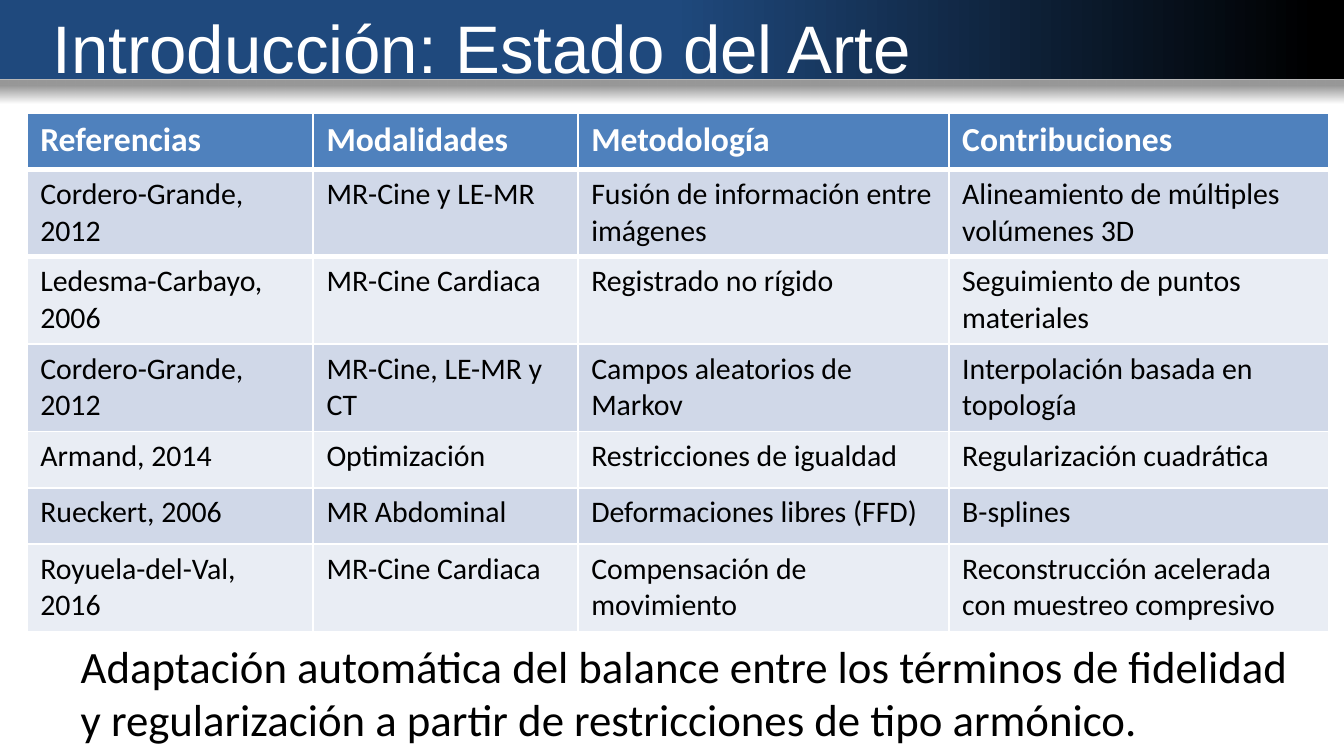
from pptx import Presentation
from pptx.dml.color import RGBColor as RGB
from pptx.enum.shapes import MSO_SHAPE as Shape
from pptx.enum.text import MSO_ANCHOR as Anchor, MSO_AUTO_SIZE as AutoSize, PP_ALIGN as Align
from pptx.oxml import parse_xml
from pptx.oxml.ns import nsdecls
from pptx.util import Inches, Pt

THEME = {
    "navy": "1F497D", "black": "000000", "white": "FFFFFF",
    "header": "4F81BD", "bands": ("D0D8E8", "E9EDF4"),
    "title": {"name": "Arial", "size": Pt(36), "bold": False},
    "heading": {"name": "Calibri", "size": Pt(18), "bold": True},
    "cell": {"name": "Calibri", "size": Pt(16), "bold": False},
    "closing": {"name": "Calibri", "size": Pt(24), "bold": False},
}


def write(frame, text, style, color):
    """Put one formatted paragraph in a text frame."""
    paragraph = frame.paragraphs[0]
    paragraph.alignment = Align.LEFT
    run = paragraph.add_run()
    run.text = text
    for name, value in THEME[style].items():
        setattr(run.font, name, value)
    run.font.color.rgb = RGB.from_string(THEME[color])


def gradient(shape, stops, angle):
    """Fill a shape with (position %, colour, opacity %) stops."""
    shape.fill.background()
    properties = shape._element.spPr
    marks = "".join(
        f'<a:gs pos="{position * 1000}"><a:srgbClr val="{THEME[color]}">'
        f'<a:alpha val="{opacity * 1000}"/></a:srgbClr></a:gs>'
        for position, color, opacity in stops)
    fill = parse_xml(
        f'<a:gradFill {nsdecls("a")} rotWithShape="1"><a:gsLst>{marks}</a:gsLst>'
        f'<a:lin ang="{angle * 60000}" scaled="0"/></a:gradFill>')
    properties.replace(properties.find("{*}noFill"), fill)


presentation = Presentation()
presentation.slide_width = width = Inches(10)
presentation.slide_height = width * 9 // 16
slide = presentation.slides.add_slide(presentation.slide_layouts[5])
bar_height = Inches(0.59)

# Soft shade under the title bar, behind everything else
shade = slide.shapes.add_shape(Shape.RECTANGLE, 0, bar_height, width, Inches(0.18))
shade.shadow.inherit = False
shade.line.fill.background()
gradient(shade, [(25, "black", 40), (100, "white", 40)], 90)

# Title bar
title = slide.shapes.title
title._element.addprevious(shade._element)
title.left, title.top, title.width, title.height = 0, 0, width, bar_height
gradient(title, [(0, "navy", 100), (50, "navy", 100), (98, "black", 100)], 0)
title_format = {"margin_left": Inches(0.39), "margin_top": Inches(0.05), "margin_bottom": 0,
                "vertical_anchor": Anchor.TOP, "auto_size": AutoSize.NONE, "word_wrap": True}
for name, value in title_format.items():
    setattr(title.text_frame, name, value)
write(title.text_frame, "Introducción: Estado del Arte", "title", "white")

# Table of references
rows = [
    ("Referencias", "Modalidades", "Metodología", "Contribuciones"),
    ("Cordero-Grande, 2012", "MR-Cine y LE-MR", "Fusión de información entre imágenes",
     "Alineamiento de múltiples volúmenes 3D"),
    ("Ledesma-Carbayo, 2006", "MR-Cine Cardiaca", "Registrado no rígido",
     "Seguimiento de puntos materiales"),
    ("Cordero-Grande, 2012", "MR-Cine, LE-MR y CT", "Campos aleatorios de Markov",
     "Interpolación basada en topología"),
    ("Armand, 2014", "Optimización", "Restricciones de igualdad", "Regularización cuadrática"),
    ("Rueckert, 2006", "MR Abdominal", "Deformaciones libres (FFD)", "B-splines"),
    ("Royuela-del-Val, 2016", "MR-Cine Cardiaca", "Compensación de movimiento",
     "Reconstrucción acelerada con muestreo compresivo"),
]
column_widths = [2.13, 1.97, 2.76, 2.83]
one_line, two_lines = 0.42, 0.65
row_heights = [one_line] + [two_lines] * 3 + [one_line] * 2 + [two_lines]
table = slide.shapes.add_table(
    len(rows), len(column_widths), Inches(0.2), Inches(0.84),
    Inches(sum(column_widths)), Inches(sum(row_heights))).table
for column, column_width in zip(table.columns, column_widths):
    column.width = Inches(column_width)
for index, (row, row_height) in enumerate(zip(rows, row_heights)):
    table.rows[index].height = Inches(row_height)
    is_header = index == 0
    fill = THEME["header"] if is_header else THEME["bands"][(index - 1) % 2]
    for position, text in enumerate(row):
        cell = table.cell(index, position)
        cell.fill.solid()
        cell.fill.fore_color.rgb = RGB.from_string(fill)
        write(cell.text_frame, text, "heading" if is_header else "cell",
              "white" if is_header else "black")
        # Thick rule between the header and the first row
        if index < 2:
            side = "lnB" if is_header else "lnT"
            cell._tc.get_or_add_tcPr().insert(0, parse_xml(
                f'<a:{side} {nsdecls("a")} w="{Pt(3)}"><a:solidFill>'
                f'<a:srgbClr val="{THEME["white"]}"/></a:solidFill></a:{side}>'))

# Closing statement
closing = slide.shapes.add_textbox(Inches(0.12), Inches(4.7), Inches(9.61), Inches(0.87))
closing.text_frame.word_wrap = True
closing.text_frame.margin_left = Inches(0.48)
write(closing.text_frame,
      "Adaptación automática del balance entre los términos de fidelidad y regularización "
      "a partir de restricciones de tipo armónico.", "closing", "black")

presentation.save("out.pptx")
